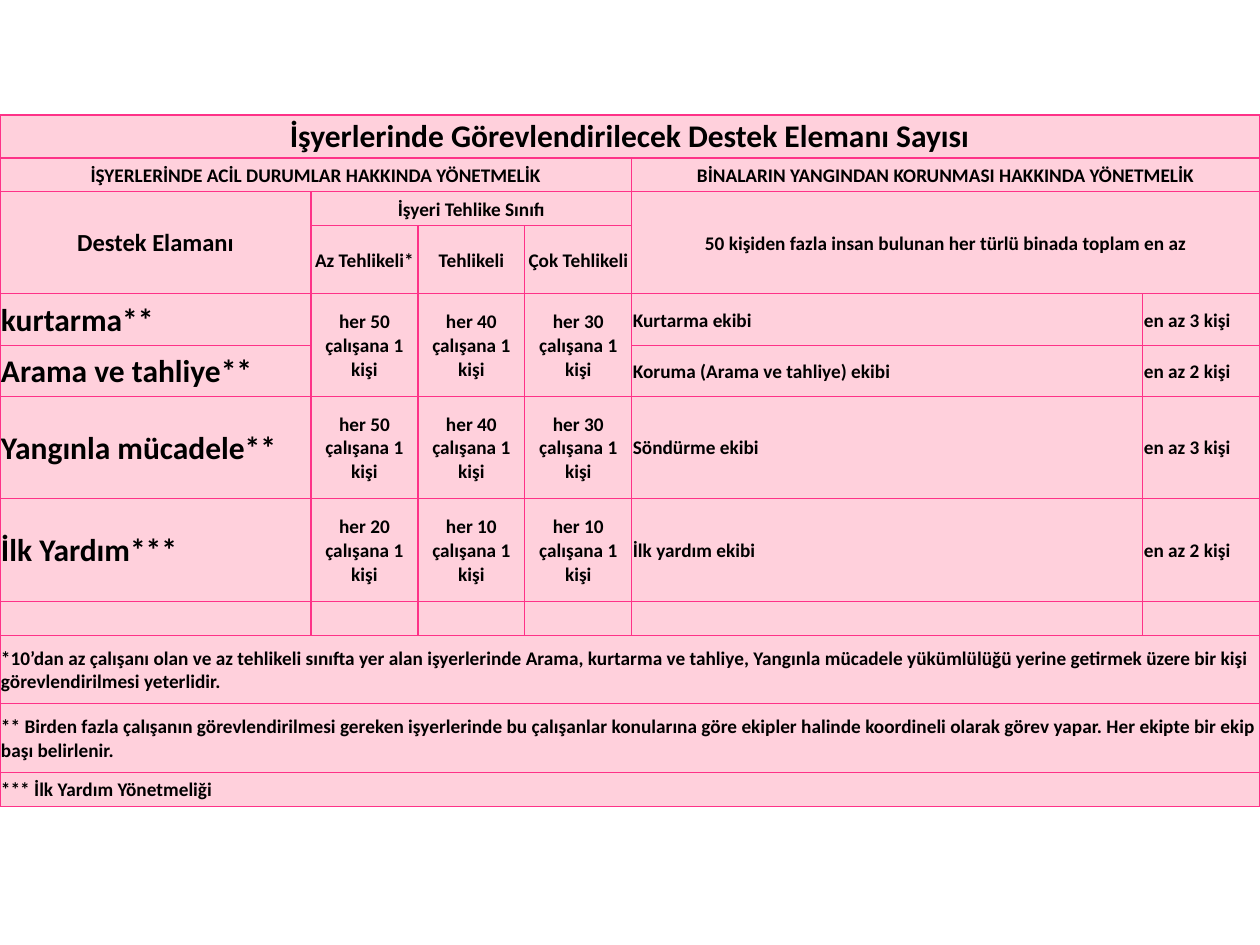
from lxml.etree import SubElement
from pptx import Presentation
from pptx.dml.color import RGBColor
from pptx.enum.text import MSO_ANCHOR as Anchor, PP_ALIGN as Align
from pptx.oxml.ns import qn
from pptx.util import Pt

EMU_PER_PX = 914400 / 126
COLORS = {"text": "000000", "fill": "FFD0DC", "border": "FE3288"}
COLUMNS = [311, 107, 107, 107, 511, 117]
ROWS = [43, 34, 34, 68, 52, 51, 102, 103, 34, 68, 69, 34]
HEADER_ROWS = 4
NOTES_ROW = 9


def px(value):
    return round(value * EMU_PER_PX)


def quota(count):
    return f"her {count} çalışana 1 kişi"


HEADERS = [
    (0, 0, 1, 6, 18, "İşyerlerinde Görevlendirilecek Destek Elemanı Sayısı"),
    (1, 0, 1, 4, 11, "İŞYERLERİNDE ACİL DURUMLAR HAKKINDA YÖNETMELİK"),
    (1, 4, 1, 2, 11, "BİNALARIN YANGINDAN KORUNMASI HAKKINDA YÖNETMELİK"),
    (2, 0, 2, 1, 14, "Destek Elamanı"),
    (2, 1, 1, 3, 11, "İşyeri Tehlike Sınıfı"),
    (2, 4, 2, 2, 11, "50 kişiden fazla insan bulunan her türlü binada toplam en az"),
    (3, 1, 1, 1, 11, "Az Tehlikeli*"),
    (3, 2, 1, 1, 11, "Tehlikeli"),
    (3, 3, 1, 1, 11, "Çok Tehlikeli"),
]
TEAMS = [
    ("kurtarma**", (50, 40, 30), 2, "Kurtarma ekibi", 3),
    ("Arama ve tahliye**", (), 1, "Koruma (Arama ve tahliye) ekibi", 2),
    ("Yangınla mücadele**", (50, 40, 30), 1, "Söndürme ekibi", 3),
    ("İlk Yardım***", (20, 10, 10), 1, "İlk yardım ekibi", 2),
]
NOTES = [
    "*10’dan az çalışanı olan ve az tehlikeli sınıfta yer alan işyerlerinde Arama, "
    "kurtarma ve tahliye, Yangınla mücadele yükümlülüğü yerine getirmek üzere bir kişi "
    "görevlendirilmesi yeterlidir.",
    "** Birden fazla çalışanın görevlendirilmesi gereken işyerlerinde bu çalışanlar "
    "konularına göre ekipler halinde koordineli olarak görev yapar. Her ekipte bir ekip "
    "başı belirlenir.",
    "*** İlk Yardım Yönetmeliği",
]


def style_cell(cell):
    cell.fill.solid()
    cell.fill.fore_color.rgb = RGBColor.from_string(COLORS["fill"])
    cell.vertical_anchor = Anchor.MIDDLE
    cell.margin_left = cell.margin_right = cell.margin_top = px(1)
    cell.margin_bottom = 0
    properties = cell._tc.get_or_add_tcPr()
    for index, side in enumerate(("lnL", "lnR", "lnT", "lnB")):
        line = SubElement(properties, qn(f"a:{side}"), w=str(Pt(0.75)))
        fill = SubElement(line, qn("a:solidFill"))
        SubElement(fill, qn("a:srgbClr"), val=COLORS["border"])
        properties.insert(index, line)
    ending = cell.text_frame.paragraphs[0]._p.get_or_add_endParaRPr()
    ending.set("sz", "1100")


def write_cell(table, row, column, text, size=11, align=Align.LEFT, height=1, width=1):
    cell = table.cell(row, column)
    if height * width > 1:
        cell.merge(table.cell(row + height - 1, column + width - 1))
    paragraph = cell.text_frame.paragraphs[0]
    paragraph.add_run().text = text
    paragraph.alignment = align
    font = paragraph.font
    font.name = "Calibri"
    font.size = Pt(size)
    font.bold = True
    font.color.rgb = RGBColor.from_string(COLORS["text"])


def add_staff_table(slide, left, top, width, height):
    table = slide.shapes.add_table(
        len(ROWS), len(COLUMNS), px(left), px(top), px(width), px(height)
    ).table
    table.first_row = table.horz_banding = False
    for column, size in zip(table.columns, COLUMNS):
        column.width = px(size * width / sum(COLUMNS))
    for row, size in zip(table.rows, ROWS):
        row.height = px(size * height / sum(ROWS))
    for cell in table.iter_cells():
        style_cell(cell)

    for row, column, rows, columns, size, text in HEADERS:
        write_cell(table, row, column, text, size, Align.CENTER, rows, columns)
    for row, (duty, counts, span, team, minimum) in enumerate(TEAMS, HEADER_ROWS):
        write_cell(table, row, 0, duty, 18)
        for column, count in enumerate(counts, 1):
            write_cell(table, row, column, quota(count), align=Align.CENTER, height=span)
        write_cell(table, row, 4, team)
        write_cell(table, row, 5, f"en az {minimum} kişi")
    for row, note in enumerate(NOTES, NOTES_ROW):
        write_cell(table, row, 0, note, width=len(COLUMNS))


def main():
    presentation = Presentation()
    presentation.slide_width = px(1260)
    presentation.slide_height = px(945)
    slide = presentation.slides.add_slide(presentation.slide_layouts[6])
    add_staff_table(slide, 0, 115, 1260, 692)
    presentation.save("out.pptx")


if __name__ == "__main__":
    main()
